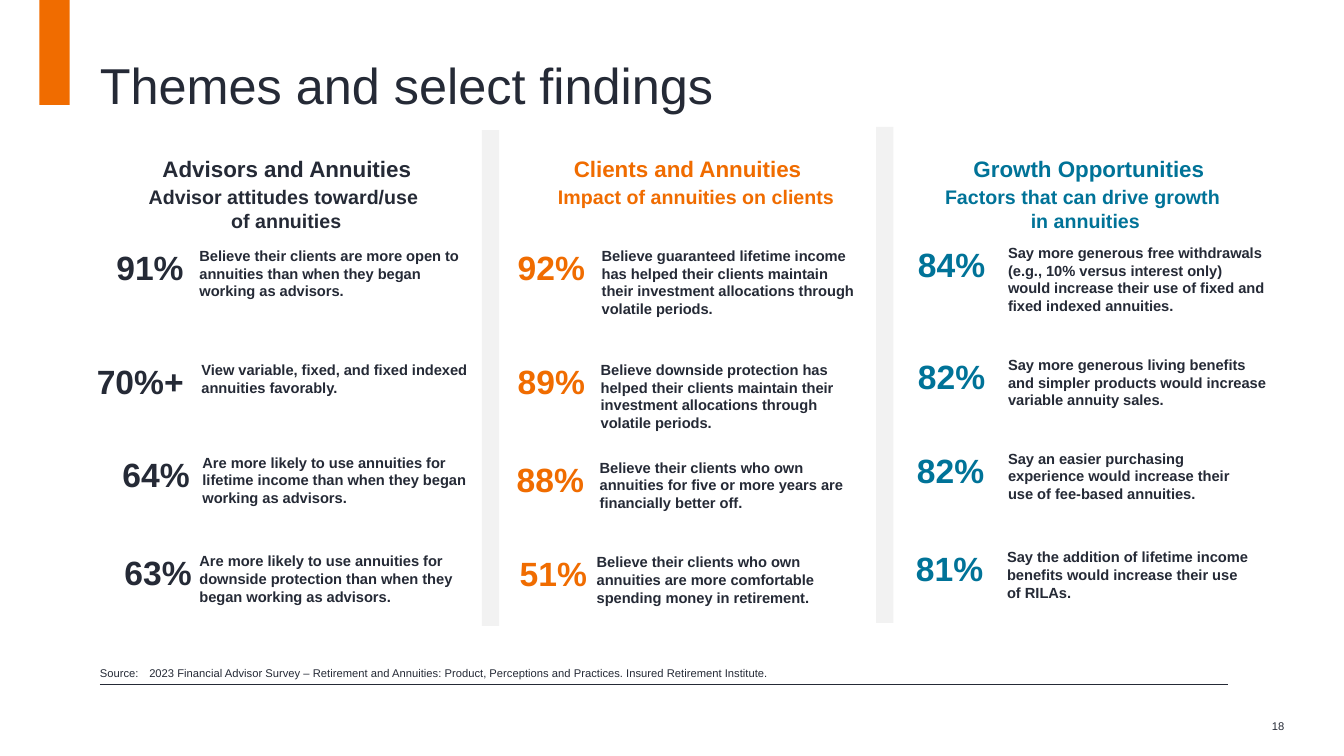
import pptx
import pptx.dml.color
import pptx.enum.shapes
import pptx.enum.text
import pptx.oxml.ns
import pptx.util
from lxml import etree
from pptx.util import Inches

RGBColor = pptx.dml.color.RGBColor
ALIGN = pptx.enum.text.PP_ALIGN
ANCHOR = pptx.enum.text.MSO_ANCHOR
SHAPES = pptx.enum.shapes

INK = RGBColor(0x25, 0x2A, 0x36)
ORANGE = RGBColor(0xF0, 0x6C, 0x00)
TEAL = RGBColor(0x00, 0x73, 0x98)
PALE = RGBColor(0xF2, 0xF2, 0xF2)

# Headings: text, left, width (and height for the second)
# Findings: share, left, width, top, then statement, left, width, height
COLUMNS = [
    (INK, ("Advisors and Annuities", 0.82, 4.05),
     ("Advisor attitudes toward/use \nof annuities", 0.82, 4.04, 0.57), [
        ("91%", 0.99, 0.93, 2.4, "Believe their clients are more open to annuities than "
         "when they began working as advisors.", 1.88, 2.86, 0.63),
        ("70%+", 0.79, 1.13, 3.53, "View variable, fixed, and fixed indexed annuities "
         "favorably.", 1.9, 2.86, 0.45),
        ("64%", 0.99, 0.99, 4.45, "Are more likely to use annuities for lifetime income "
         "than when they began working as advisors.", 1.91, 2.86, 0.63),
        ("63%", 0.99, 1.01, 5.43, "Are more likely to use annuities for downside "
         "protection than when they began working as advisors.", 1.88, 2.86, 0.63)]),
    (ORANGE, ("Clients and Annuities", 4.77, 4.1),
     ("Impact of annuities on clients", 4.87, 4.07, 0.34), [
        ("92%", 4.27, 1.63, 2.4, "Believe guaranteed lifetime income has helped their "
         "clients maintain their investment allocations through volatile periods.",
         5.87, 2.76, 0.81),
        ("89%", 4.27, 1.63, 3.53, "Believe downside protection has helped their clients "
         "maintain their investment allocations through volatile periods.",
         5.86, 2.76, 0.81),
        ("88%", 4.41, 1.48, 4.5, "Believe their clients who own annuities for five or "
         "more years are financially better off.", 5.85, 2.76, 0.63),
        ("51%", 4.29, 1.63, 5.44, "Believe their clients who own annuities are more "
         "comfortable spending money in retirement.", 5.82, 2.76, 0.63)]),
    (TEAL, ("Growth Opportunities", 8.94, 3.72),
     ("Factors that can drive growth \nin annuities", 8.87, 3.79, 0.57), [
        ("84%", 8.24, 1.63, 2.37, "Say more generous free withdrawals (e.g., 10% versus "
         "interest only) would increase their use of fixed and fixed indexed annuities.",
         9.9, 2.76, 0.81),
        ("82%", 8.39, 1.48, 3.48, "Say more generous living benefits and simpler products "
         "would increase variable annuity sales.", 9.9, 2.76, 0.63),
        ("82%", 8.23, 1.63, 4.41, "Say an easier purchasing experience would increase "
         "their use of fee-based annuities.", 9.9, 2.46, 0.63),
        ("81%", 8.22, 1.63, 5.39, "Say the addition of lifetime income benefits would "
         "increase their use of RILAs.", 9.89, 2.59, 0.63)]),
]


class FindingsPage:
    font = "Arial"

    def __init__(self, deck):
        self.page = deck.slides.add_slide(deck.slide_layouts[5])

    def set_text(self, box, text, size, color, bold=False, align=ALIGN.LEFT):
        """Fill a shape with one styled paragraph and return the paragraph."""
        box.text_frame.word_wrap = True
        para = box.text_frame.paragraphs[0]
        para.text = text
        para.alignment = align
        for span in para.runs:
            span.font.name = self.font
            span.font.size = pptx.util.Pt(size)
            span.font.bold = bold
            span.font.color.rgb = color
        return para

    def set_frame(self, box, anchor, bottom=0):
        """Anchor the text and remove all insets but the bottom one."""
        frame = box.text_frame
        frame.auto_size = pptx.enum.text.MSO_AUTO_SIZE.NONE
        frame.vertical_anchor = anchor
        frame.margin_left = frame.margin_right = frame.margin_top = 0
        frame.margin_bottom = Inches(bottom)

    def title(self, text, left, top, width, height):
        box = self.page.shapes.title
        box.left, box.top = Inches(left), Inches(top)
        box.width, box.height = Inches(width), Inches(height)
        self.set_frame(box, ANCHOR.BOTTOM)
        self.set_text(box, text, 36, INK)

    def text_box(self, left, top, width, height):
        return self.page.shapes.add_textbox(
            Inches(left), Inches(top), Inches(width), Inches(height))

    def bold_text(self, text, left, top, width, height, size, color, align=ALIGN.LEFT):
        box = self.text_box(left, top, width, height)
        self.set_text(box, text, size, color, True, align)
        box.text_frame.auto_size = pptx.enum.text.MSO_AUTO_SIZE.SHAPE_TO_FIT_TEXT

    def small_text(self, text, left, top, width, height, anchor, bottom=0,
                   align=ALIGN.LEFT):
        box = self.text_box(left, top, width, height)
        self.set_frame(box, anchor, bottom)
        return self.set_text(box, text, 8, INK, align=align)

    def source(self, text, left, top, width, height):
        para = self.small_text(text, left, top, width, height, ANCHOR.BOTTOM, 0.04)
        para.space_after = pptx.util.Pt(2)
        indent = Inches(0.49)
        properties = para._p.get_or_add_pPr()
        properties.set("marL", str(indent))
        properties.set("indent", str(-indent))

    def bar(self, left, top, width, height, color):
        bar = self.page.shapes.add_shape(
            SHAPES.MSO_SHAPE.RECTANGLE,
            Inches(left), Inches(top), Inches(width), Inches(height))
        bar.shadow.inherit = False
        bar.fill.solid()
        bar.fill.fore_color.rgb = color
        bar.line.fill.background()

    def rule(self, left, right, top):
        rule = self.page.shapes.add_connector(
            SHAPES.MSO_CONNECTOR.STRAIGHT,
            Inches(left), Inches(top), Inches(right), Inches(top))
        rule.line.color.rgb = INK
        rule.line.width = pptx.util.Pt(0.5)
        etree.SubElement(rule._element.spPr, pptx.oxml.ns.qn("a:effectLst"))

    def column(self, color, heading, subheading, findings):
        text, left, width = heading
        self.bold_text(text, left, 1.49, width, 0.37, 16, color, ALIGN.CENTER)
        text, left, width, height = subheading
        self.bold_text(text, left, 1.79, width, height, 14, color, ALIGN.CENTER)
        for share, left, width, top, text, text_left, text_width, height in findings:
            self.bold_text(share, left, top, width, 0.5, 24, color, ALIGN.RIGHT)
            self.bold_text(text, text_left, top, text_width, height, 10.5, INK)


def main():
    deck = pptx.Presentation()
    deck.slide_width, deck.slide_height = Inches(13.33), Inches(7.5)
    page = FindingsPage(deck)
    page.bar(0.39, 0, 0.3, 1.04, ORANGE)
    page.rule(0.99, 12.18, 6.79)
    page.bar(4.78, 1.29, 0.17, 4.92, PALE)
    page.bar(8.69, 1.26, 0.17, 4.92, PALE)
    page.title("Themes and select findings", 0.99, 0.43, 11.19, 0.71)
    for column in COLUMNS:
        page.column(*column)
    page.source("Source: \t2023 Financial Advisor Survey – Retirement and Annuities: "
                "Product, Perceptions and Practices. Insured Retirement Institute.",
                0.99, 6.35, 11.19, 0.43)
    page.small_text("18", 12.23, 7, 0.51, 0.4, ANCHOR.MIDDLE, align=ALIGN.RIGHT)
    deck.save("out.pptx")


if __name__ == "__main__":
    main()
